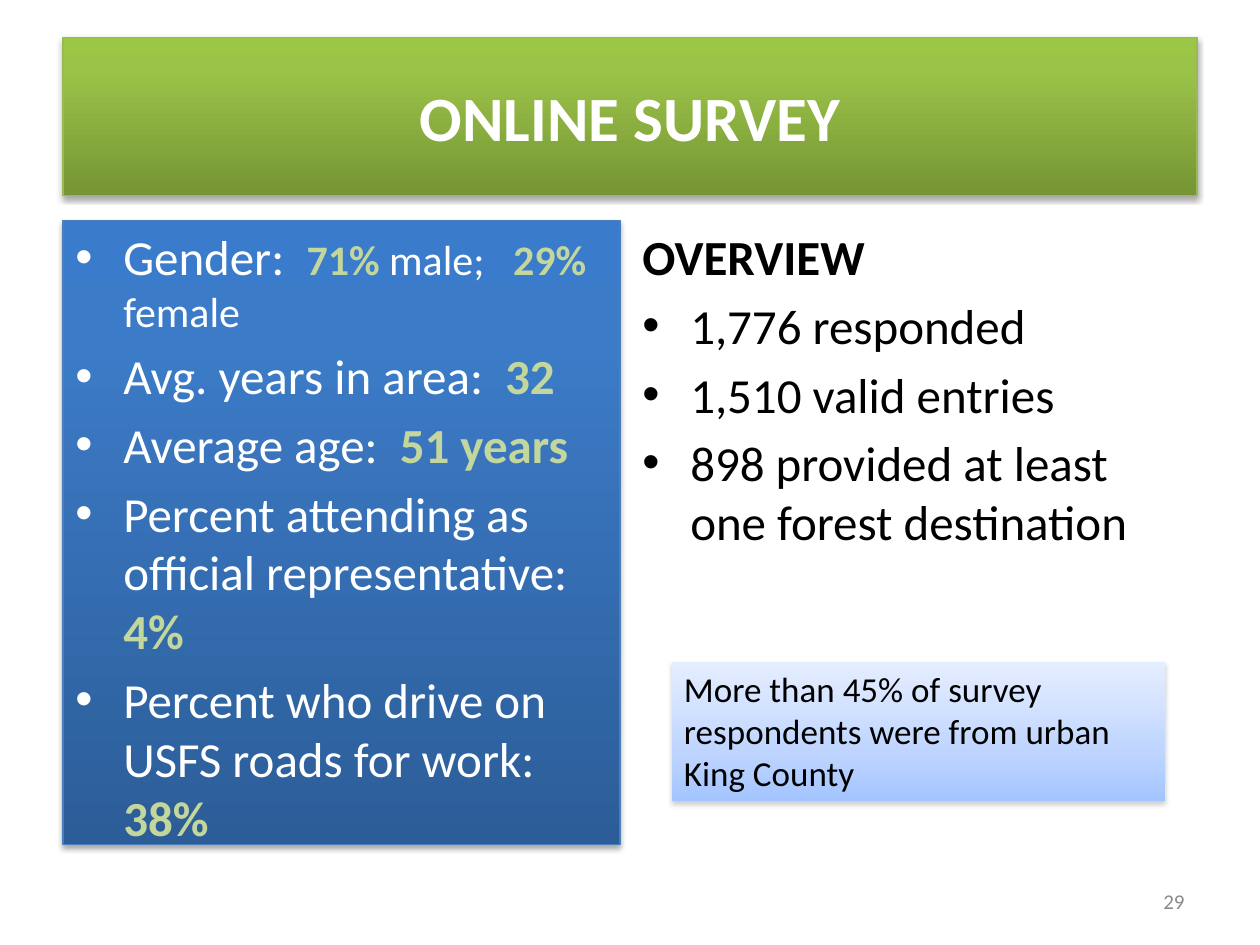
from lxml.etree import SubElement
from pptx import Presentation
from pptx.dml.color import RGBColor
from pptx.enum.shapes import MSO_SHAPE
from pptx.enum.text import MSO_ANCHOR, PP_ALIGN
from pptx.oxml.ns import qn
from pptx.util import Emu, Inches, Pt

WHITE, BLACK, GREY, LIME = "FFFFFF", "000000", "898989", "C3D69B"


def rgb(value):
    return RGBColor.from_string(value)


def add_color(parent, value, alpha=None):
    clr = SubElement(parent, qn("a:srgbClr"), val=value)
    if alpha is not None:
        SubElement(clr, qn("a:alpha"), val=str(alpha * 1000))


class Deck:
    """Holds the slide and its style; lengths are shares of the slide's size."""
    font = "Calibri"
    indent = Inches(0.38)

    def __init__(self, width, height):
        self.prs = Presentation()
        self.prs.slide_width, self.prs.slide_height = Inches(width), Inches(height)
        self.s = self.prs.slides.add_slide(self.prs.slide_layouts[5])

    def box(self, left, top, width, height):
        w, h = self.prs.slide_width, self.prs.slide_height
        return [Emu(round(v)) for v in (left * w, top * h, width * w, height * h)]

    # Gradient fill, outline and soft shadow
    def decorate(self, sp, stops, line=None, shadow=(BLACK, 35)):
        sp.fill.gradient()
        sp.fill.gradient_angle = 270
        spPr = sp._element.spPr
        gs_list = spPr.find(qn("a:gradFill")).find(qn("a:gsLst"))
        gs_list.clear()
        for pos, color in stops:
            add_color(SubElement(gs_list, qn("a:gs"), pos=str(pos * 1000)), color)
        if line:
            sp.line.color.rgb = rgb(line)
            sp.line.width = Pt(0.75)
        else:
            sp.line.fill.background()
        sp.shadow.inherit = False
        shdw = SubElement(spPr.find(qn("a:effectLst")), qn("a:outerShdw"),
                          blurRad=str(Pt(3.1)), dist=str(Pt(1.8)),
                          dir="5400000", rotWithShape="0")
        add_color(shdw, *shadow)

    # Paragraphs are (bulleted, runs); a run is (text, format changes)
    def fill_text(self, sp, paragraphs, anchor=MSO_ANCHOR.TOP, align=PP_ALIGN.LEFT, **style):
        tf = sp.text_frame
        tf.word_wrap = True
        tf.vertical_anchor = anchor
        for i, (bulleted, runs) in enumerate(paragraphs):
            p = tf.add_paragraph() if i else tf.paragraphs[0]
            p.alignment = align
            if i:
                p.space_before = Pt(5.6)
            if bulleted:
                pPr = p._p.get_or_add_pPr()
                pPr.set("marL", str(self.indent))
                pPr.set("indent", str(-self.indent))
                SubElement(pPr, qn("a:buFont"), typeface="Arial")
                SubElement(pPr, qn("a:buChar"), char="•")
            for text, changes in runs:
                r = p.add_run()
                r.text = text
                look = {"size": 28, "bold": False, "color": BLACK, **style, **changes}
                r.font.color.rgb = rgb(look.pop("color"))
                look.update(name=self.font, size=Pt(look["size"]))
                for key, value in look.items():
                    setattr(r.font, key, value)

    def title(self, at, text, stops, line):
        sp = self.s.shapes.title
        sp.left, sp.top, sp.width, sp.height = self.box(*at)
        self.decorate(sp, stops, line)
        self.fill_text(sp, [(False, [(text, {})])], MSO_ANCHOR.MIDDLE, PP_ALIGN.CENTER,
                       size=36, bold=True, color=WHITE)

    def panel(self, at, paragraphs, stops, line=None, shadow=(BLACK, 35), **style):
        sp = self.s.shapes.add_shape(MSO_SHAPE.RECTANGLE, *self.box(*at))
        self.decorate(sp, stops, line, shadow)
        self.fill_text(sp, paragraphs, **style)

    def text(self, at, paragraphs, **style):
        self.fill_text(self.s.shapes.add_textbox(*self.box(*at)), paragraphs, **style)


def main():
    deck = Deck(10, 7.5)
    margin, column = 0.05, 0.442
    body_top, body_height = 1.75 / 7.5, 0.66

    # Title band
    deck.title((margin, 0.04, 0.9, 1.25 / 7.5), "ONLINE SURVEY",
               [(0, "9CC746"), (20, "9BC348"), (100, "769535")], "98B954")

    # Respondent profile
    key = {"bold": True, "color": LIME}
    small, small_key = {"size": 24}, {"size": 24, **key}
    facts = [("Avg. years in area:  ", "32"),
             ("Average age:  ", "51 years"),
             ("Percent attending as official representative:  ", "4%"),
             ("Percent who drive on USFS roads for work:  ", "38%")]
    profile = [(True, [("Gender:  ", {}), ("71% ", small_key), ("male;   ", small),
                       ("29% ", small_key), ("female", small)])]
    profile += [(True, [(label, {}), (value, key)]) for label, value in facts]
    deck.panel((margin, body_top, column, body_height), profile,
               [(0, "3A7CCB"), (20, "3C7BC7"), (100, "2C5D98")], "4A7EBB", color=WHITE)

    # Overview
    overview = ["1,776 responded", "1,510 valid entries",
                "898 provided at least one forest destination"]
    deck.text((0.5, body_top, column, body_height),
              [(False, [("OVERVIEW", {"bold": True})])]
              + [(True, [(item, {})]) for item in overview])

    # Slide number
    deck.text((0.72, 6.95 / 7.5, 0.23, 0.4 / 7.5), [(False, [("29", {})])],
              anchor=MSO_ANCHOR.MIDDLE, align=PP_ALIGN.RIGHT, size=12, color=GREY)

    # Callout
    note = "More than 45% of survey respondents were from urban King County"
    deck.panel((0.533, 0.7, 0.392, 1.11 / 7.5), [(False, [(note, {})])],
               [(0, "E5EEFF"), (65, "BFD5FF"), (100, "A3C4FF")],
               shadow=("808080", 38), size=20)

    deck.prs.save("out.pptx")


if __name__ == "__main__":
    main()
